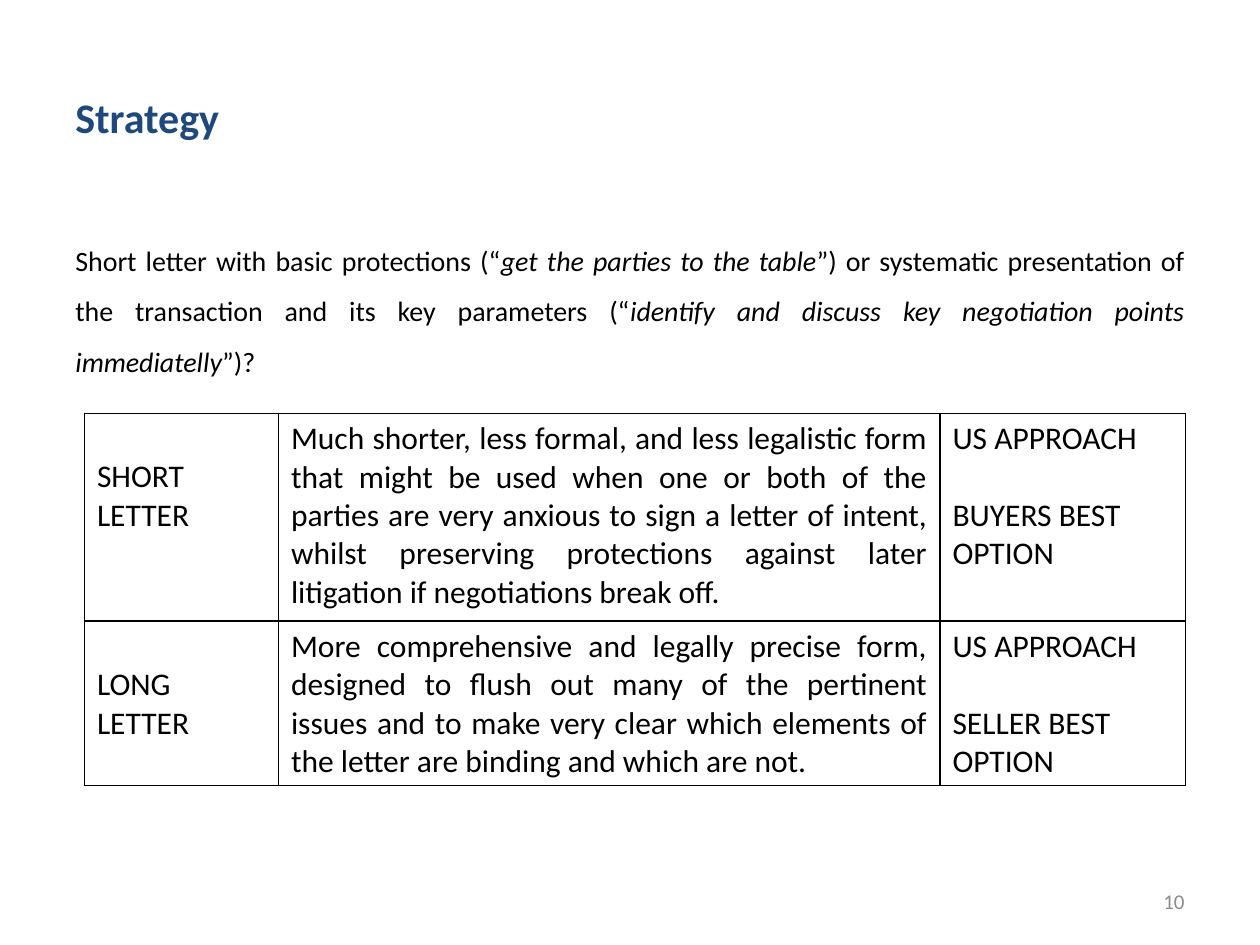
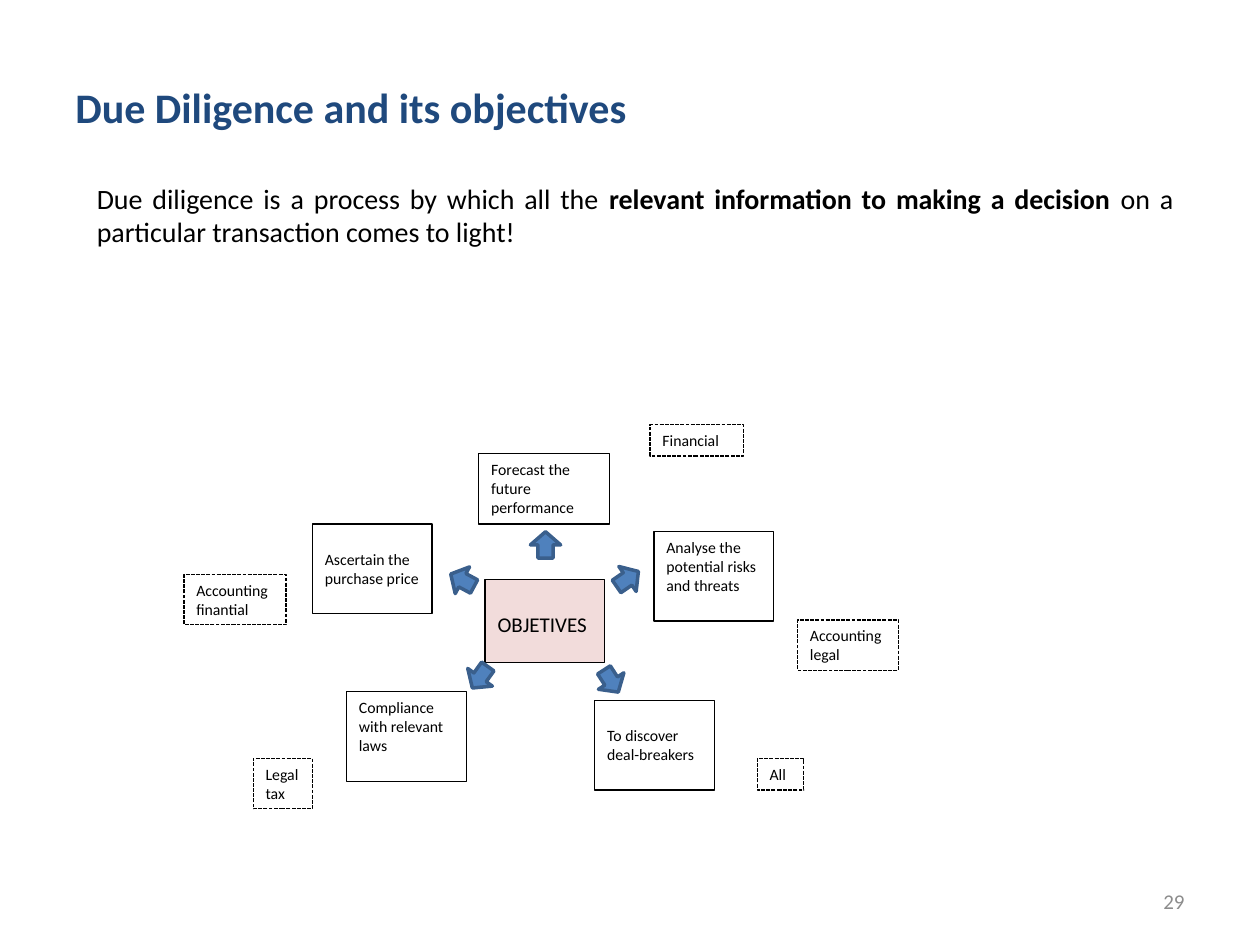
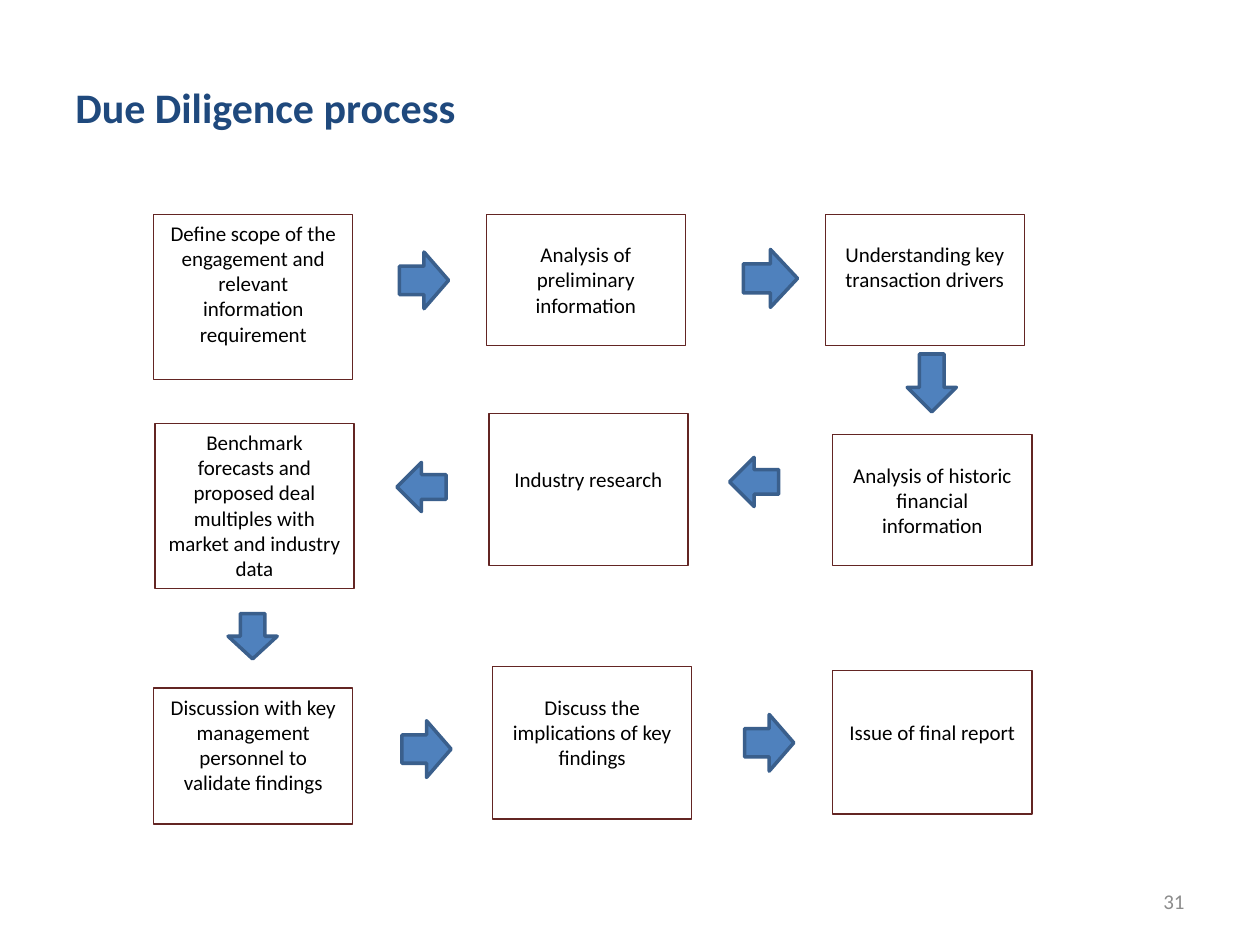
import pptx
import pptx.util
import pptx.dml.color
import pptx.enum.dml
import pptx.enum.shapes
import pptx.enum.text
import pptx.oxml
import pptx.oxml.ns

Inches = pptx.util.Inches
Pt = pptx.util.Pt
ALIGN = pptx.enum.text.PP_ALIGN
ANCHOR = pptx.enum.text.MSO_ANCHOR
SHAPE = pptx.enum.shapes.MSO_SHAPE

FONT = "Calibri"
NAVY, BLACK, GREY = "1F497D", "000000", "8C8C8C"
BLUE, DARK_BLUE, PINK, MAROON = "4F81BD", "3A5F8C", "F2DCDB", "632523"
LINE_HEIGHT = 1.22  # line height of the font, in multiples of its size

OBJECTIVES = [  # left, top, width, height, text, empty lines above
    (3.8, 3.6, 1.04, 0.56, "Forecast the future performance", 0),
    (2.48, 4.16, 0.95, 0.71, "Ascertain the purchase price", 1),
    (5.19, 4.22, 0.95, 0.71, "Analyse the potential risks and threats", 0),
    (4.72, 5.56, 0.95, 0.71, "To discover deal-breakers", 1),
    (2.75, 5.49, 0.95, 0.71, "Compliance with relevant laws", 0),
]
REVIEW_AREAS = [  # left, top, width, height, text
    (5.16, 3.37, 0.74, 0.25, "Financial"),
    (6.33, 4.92, 0.8, 0.4, "Accounting legal"),
    (6.01, 6.02, 0.37, 0.25, "All"),
    (2.01, 6.02, 0.47, 0.4, "Legal tax"),
    (1.46, 4.56, 0.81, 0.4, "Accounting finantial"),
]
OBJECTIVE_ARROWS = [  # left, top, rotation
    (4.21, 4.22, 0),
    (3.55, 4.5, 298.1),
    (4.86, 4.49, 55.3),
    (3.69, 5.27, 215.6),
    (4.73, 5.3, 147.1),
]
STEPS = [  # left, top, height, text, space above the text in points
    (1.22, 1.7, 1.31, "Define scope of the engagement and relevant information requirement", 0),
    (3.86, 1.7, 1.04, "Analysis of preliminary information", 10),
    (6.55, 1.7, 1.04, "Understanding key transaction drivers", 10),
    (6.61, 3.45, 1.04, "Analysis of historic financial information", 10),
    (3.88, 3.28, 1.21, "Industry research", 22),
    (1.23, 3.36, 1.31,
     "Benchmark forecasts and proposed deal multiples with market and industry data", 0),
    (1.22, 5.46, 1.08, "Discussion with key management personnel to validate findings", 0),
    (3.91, 5.29, 1.21, "Discuss the implications of key findings", 10),
    (6.61, 5.32, 1.14, "Issue of final report", 20),
]
STEP_ARROWS = [  # preset, left, top, width, height
    (SHAPE.RIGHT_ARROW, 3.17, 2, 0.39, 0.45),
    (SHAPE.RIGHT_ARROW, 5.9, 1.98, 0.43, 0.46),
    (SHAPE.DOWN_ARROW, 7.2, 2.81, 0.39, 0.46),
    (SHAPE.LEFT_ARROW, 5.79, 3.63, 0.39, 0.39),
    (SHAPE.LEFT_ARROW, 3.15, 3.67, 0.39, 0.39),
    (SHAPE.DOWN_ARROW, 1.81, 4.87, 0.39, 0.36),
    (SHAPE.RIGHT_ARROW, 3.19, 5.72, 0.39, 0.45),
    (SHAPE.RIGHT_ARROW, 5.91, 5.67, 0.39, 0.45),
]
LETTER_ROWS = [  # paragraphs of the name, description, paragraphs of the approach
    (["SHORT LETTER"],
     "Much shorter, less formal, and less legalistic form that might be used when one or both "
     "of the parties are very anxious to sign a letter of intent, whilst preserving protections "
     "against later litigation if negotiations break off.",
     ["US APPROACH", "BUYERS BEST OPTION"]),
    (["LONG", "LETTER"],
     "More comprehensive and legally precise form, designed to flush out many of the pertinent "
     "issues and to make very clear which elements of the letter are binding and which are not.",
     ["US APPROACH", "SELLER BEST OPTION"]),
]


def color(hex_code):
    return pptx.dml.color.RGBColor.from_string(hex_code)


def apply(target, values):
    for name, value in values.items():
        setattr(target, name, value)


def inches(*lengths):
    return [Inches(length) for length in lengths]


def top_margin(points):
    """Default inset plus lines of text adding up to the given size."""
    return Inches(0.05) + Pt(points * LINE_HEIGHT)


def write_spans(para, spans, size, ink=BLACK, **layout):
    """Fill a paragraph from (text, font values) pairs."""
    apply(para, layout)
    for text, values in spans:
        span = para.add_run()
        span.text = text
        apply(span.font, {"name": FONT, "size": Pt(size), **values})
        span.font.color.rgb = color(ink)


def add_text(page, place, spans, size, ink=BLACK, anchor=ANCHOR.TOP, **layout):
    box = page.shapes.add_textbox(*inches(*place))
    apply(box.text_frame, {"word_wrap": True, "vertical_anchor": anchor})
    write_spans(box.text_frame.paragraphs[0], spans, size, ink, **layout)


def add_page(deck, title, number, title_height=1.09):
    page = deck.slides.add_slide(deck.slide_layouts[6])
    add_text(page, (0.5, 0.3, 9, title_height), [(title, {"bold": True})], 24, NAVY,
             ANCHOR.MIDDLE)
    add_text(page, (7.17, 6.95, 2.33, 0.4), [(number, {})], 12, GREY, ANCHOR.MIDDLE,
             alignment=ALIGN.RIGHT)
    return page


def add_preset(page, preset, place, fill, line, width):
    shape = page.shapes.add_shape(preset, *inches(*place))
    shape.shadow.inherit = False
    if fill:
        shape.fill.solid()
        shape.fill.fore_color.rgb = color(fill)
    else:
        shape.fill.background()
    shape.line.color.rgb = color(line)
    shape.line.width = Pt(width)
    return shape


def add_box(page, place, text, size, above=0, fill=None, line=BLACK, align=ALIGN.LEFT):
    box = add_preset(page, SHAPE.RECTANGLE, place, fill, line, 0.75)
    apply(box.text_frame, {"word_wrap": True, "vertical_anchor": ANCHOR.TOP,
                           "margin_top": top_margin(above)})
    write_spans(box.text_frame.paragraphs[0], [(text, {})], size, alignment=align)
    return box


def add_arrow(page, preset, place, rotation=0):
    arrow = add_preset(page, preset, place, BLUE, DARK_BLUE, 2)
    arrow.rotation = rotation


def add_borders(cell):
    properties = cell._tc.get_or_add_tcPr()
    for side in ("lnL", "lnR", "lnT", "lnB"):
        properties.append(pptx.oxml.parse_xml(
            f'<a:{side} {pptx.oxml.ns.nsdecls("a")} w="{Pt(1)}"><a:solidFill>'
            f'<a:srgbClr val="{BLACK}"/></a:solidFill></a:{side}>'))


def fill_cell(cell, texts, above=0, gap=0, align=ALIGN.LEFT):
    add_borders(cell)
    cell.fill.background()
    cell.margin_top = top_margin(above)
    for index, text in enumerate(texts):
        frame = cell.text_frame
        para = frame.add_paragraph() if index else frame.paragraphs[0]
        write_spans(para, [(text, {})], 18, alignment=align,
                    space_before=Pt(gap if index else 0))


def add_letter_table(page):
    table = page.shapes.add_table(2, 3, *inches(0.67, 3.28, 8.74, 2.95)).table
    apply(table, {"first_row": False, "horz_banding": False})
    for column, width in zip(table.columns, inches(1.54, 5.25, 1.95)):
        column.width = width
    for row, height in zip(table.rows, inches(1.65, 1.3)):
        row.height = height
    for row, (name, description, approach) in zip(table.rows, LETTER_ROWS):
        fill_cell(row.cells[0], name, above=18)
        fill_cell(row.cells[1], [description], align=ALIGN.JUSTIFY)
        fill_cell(row.cells[2], approach, gap=22)


def build_strategy(deck):
    page = add_page(deck, "Strategy", "10", title_height=1.25)
    italic = {"italic": True}
    add_text(page, (0.5, 1.75, 9, 1.45), [
        ("Short letter with basic protections (“", {}),
        ("get the parties to the table", italic),
        ("”) or systematic presentation of the transaction and its key parameters (“", {}),
        ("identify and discuss key negotiation points immediatelly", italic),
        ("”)?", {}),
    ], 16, alignment=ALIGN.JUSTIFY, line_spacing=1.5)
    add_letter_table(page)


def build_objectives(deck):
    page = add_page(deck, "Due Diligence and its objectives", "29")
    add_text(page, (0.67, 1.39, 8.74, 0.7), [
        ("Due diligence is a process by which all the ", {}),
        ("relevant information to making a decision ", {"bold": True}),
        ("on a particular transaction comes to light!", {}),
    ], 16, alignment=ALIGN.JUSTIFY)
    add_box(page, (3.85, 4.6, 0.95, 0.66), "OBJETIVES", 12, above=12, fill=PINK)
    for *place, text, lines_above in OBJECTIVES:
        add_box(page, place, text, 9, above=9 * lines_above)
    for left, top, rotation in OBJECTIVE_ARROWS:
        add_arrow(page, SHAPE.UP_ARROW, (left, top, 0.24, 0.21), rotation)
    for *place, text in REVIEW_AREAS:
        box = add_box(page, place, text, 9)
        box.line.dash_style = pptx.enum.dml.MSO_LINE.SQUARE_DOT


def build_process(deck):
    page = add_page(deck, "Due Diligence process", "31")
    for left, top, height, text, above in STEPS:
        add_box(page, (left, top, 1.58, height), text, 12, above, line=MAROON,
                align=ALIGN.CENTER)
    for preset, *place in STEP_ARROWS:
        add_arrow(page, preset, place)


def main():
    deck = pptx.Presentation()
    apply(deck, {"slide_width": Inches(10), "slide_height": Inches(7.5)})
    build_strategy(deck)
    build_objectives(deck)
    build_process(deck)
    deck.save("out.pptx")


if __name__ == "__main__":
    main()
